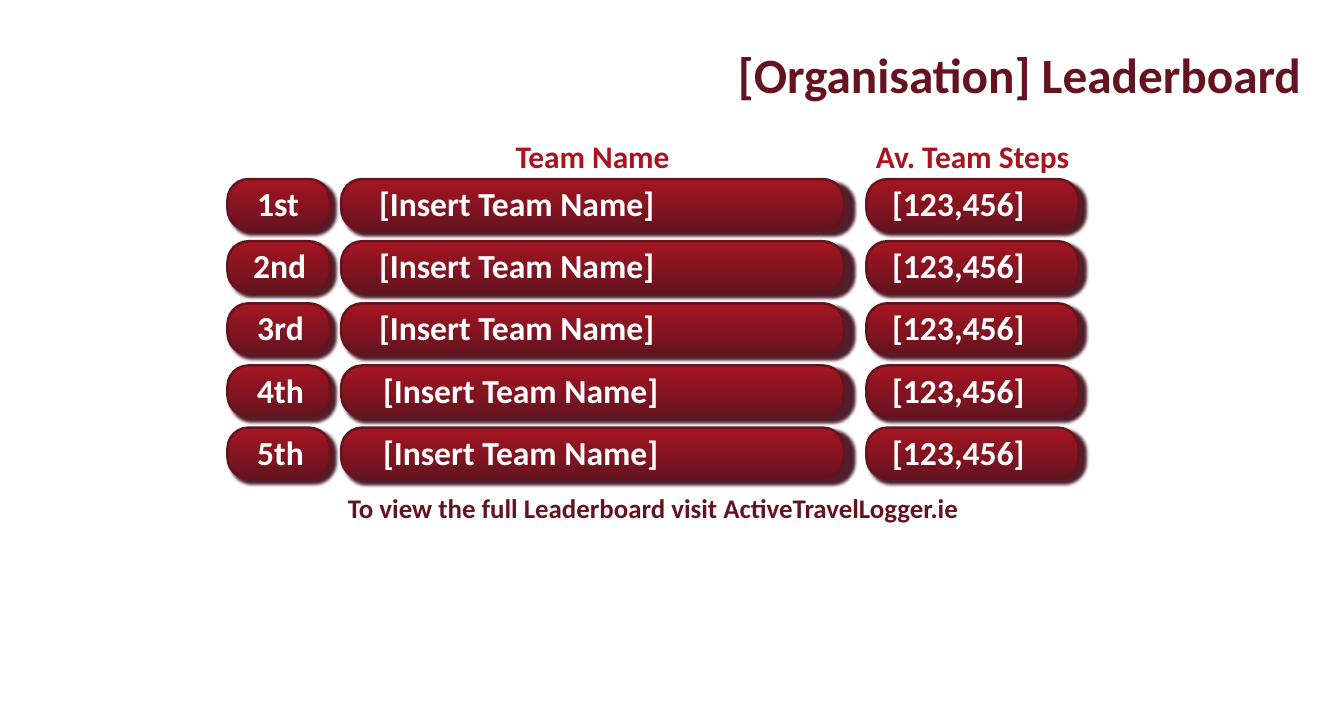
from lxml import etree
from pptx import Presentation
from pptx.dml.color import RGBColor
from pptx.enum import shapes, text
from pptx.oxml.ns import qn
from pptx.util import Inches, Pt

# Content
TITLE = "[Organisation] Leaderboard"
FOOTER = "To view the full Leaderboard visit ActiveTravelLogger.ie"
TEAMS = [
    ("1st", "[Insert Team Name]", "[123,456]"),
    ("2nd", "[Insert Team Name]", "[123,456]"),
    ("3rd", "[Insert Team Name]", "[123,456]"),
    ("4th", "[Insert Team Name]", "[123,456]"),
    ("5th", "[Insert Team Name]", "[123,456]"),
]
COLUMNS = [  # heading, pill left, pill width, text left, text width
    ("", 2.82, 1.27, 3.09, 0.91),
    ("Team Name", 4.23, 6.23, 4.6, 5.66),
    ("Av. Team Steps", 10.74, 2.63, 10.96, 1.88),
]
TEXT_SHIFTS = {"2nd": (-0.05, 0, 0), "4th": (0, 0.05, 0), "5th": (0, 0.05, 0)}
NO_SHIFT = (0, 0, 0)

# Style
COLORS = {"dark": "661320", "red": "A61521", "shadow": "471320", "white": "FFFFFF"}
FONT = "Calibri"
FIRST_ROW, ROW_STEP, PILL_HEIGHT = 2.22, 0.77, 0.63
HEADING_TOP = 1.65


def rgb(name):
    return RGBColor.from_string(COLORS[name])


def write(shape, words, size, color, align=text.PP_ALIGN.LEFT):
    frame = shape.text_frame
    frame.word_wrap = True
    frame.auto_size = text.MSO_AUTO_SIZE.SHAPE_TO_FIT_TEXT
    frame.vertical_anchor = text.MSO_ANCHOR.TOP
    paragraph = frame.paragraphs[0]
    paragraph.alignment = align
    run = paragraph.add_run()
    run.text = words
    run.font.name, run.font.size, run.font.bold = FONT, Pt(size), True
    run.font.color.rgb = rgb(color)


def add_text(slide, words, left, top, width, height, **style):
    box = slide.shapes.add_textbox(*map(Inches, (left, top, width, height)))
    write(box, words, **style)


def add_pill(slide, left, top, width):
    pill = slide.shapes.add_shape(
        shapes.MSO_SHAPE.ROUNDED_RECTANGLE,
        *map(Inches, (left, top, width, PILL_HEIGHT)))
    pill.adjustments[0] = 0.41
    pill.fill.gradient()
    pill.fill.gradient_angle = 90
    for stop, color in zip(pill.fill.gradient_stops, ("dark", "red")):
        stop.color.rgb = rgb(color)
        stop.position = 0 if color == "dark" else 1
    pill.line.color.rgb = rgb("dark")
    pill.line.width = Pt(2.25)

    # Offset shadow, slightly larger than the pill
    pill.shadow.inherit = False
    effects = pill.element.spPr.find(qn("a:effectLst"))
    shadow = etree.SubElement(
        effects, qn("a:outerShdw"), blurRad=str(Pt(3)), dist=str(Pt(4.7)),
        dir="2700000", sx="101000", sy="101000", algn="tl", rotWithShape="0")
    tone = etree.SubElement(shadow, qn("a:srgbClr"), val=COLORS["shadow"])
    etree.SubElement(tone, qn("a:alpha"), val="94000")


presentation = Presentation()
presentation.slide_width, presentation.slide_height = Inches(16.66), Inches(8.75)
slide = presentation.slides.add_slide(presentation.slide_layouts[5])

# Title
title = slide.shapes.title
title.left, title.top, title.width, title.height = map(Inches, (7.35, 0.5, 8.89, 0.84))
write(title, TITLE, size=44, color="dark", align=text.PP_ALIGN.RIGHT)

# Column headings
for heading, left, width, _, _ in COLUMNS:
    if heading:
        add_text(slide, heading, left, HEADING_TOP, width, 0.57,
                 size=28, color="red", align=text.PP_ALIGN.CENTER)

# Leaderboard rows
for row, team in enumerate(TEAMS):
    top = FIRST_ROW + row * ROW_STEP
    shifts = TEXT_SHIFTS.get(team[0], NO_SHIFT)
    for words, column, shift in zip(team, COLUMNS, shifts):
        _, left, width, text_left, text_width = column
        add_pill(slide, left, top, width)
        add_text(slide, words, text_left + shift, top, text_width, 0.51,
                 size=30, color="white")

# Footer
add_text(slide, FOOTER, 2.82, 6.05, 10.55, 0.5,
         size=24, color="dark", align=text.PP_ALIGN.CENTER)

presentation.save("out.pptx")
